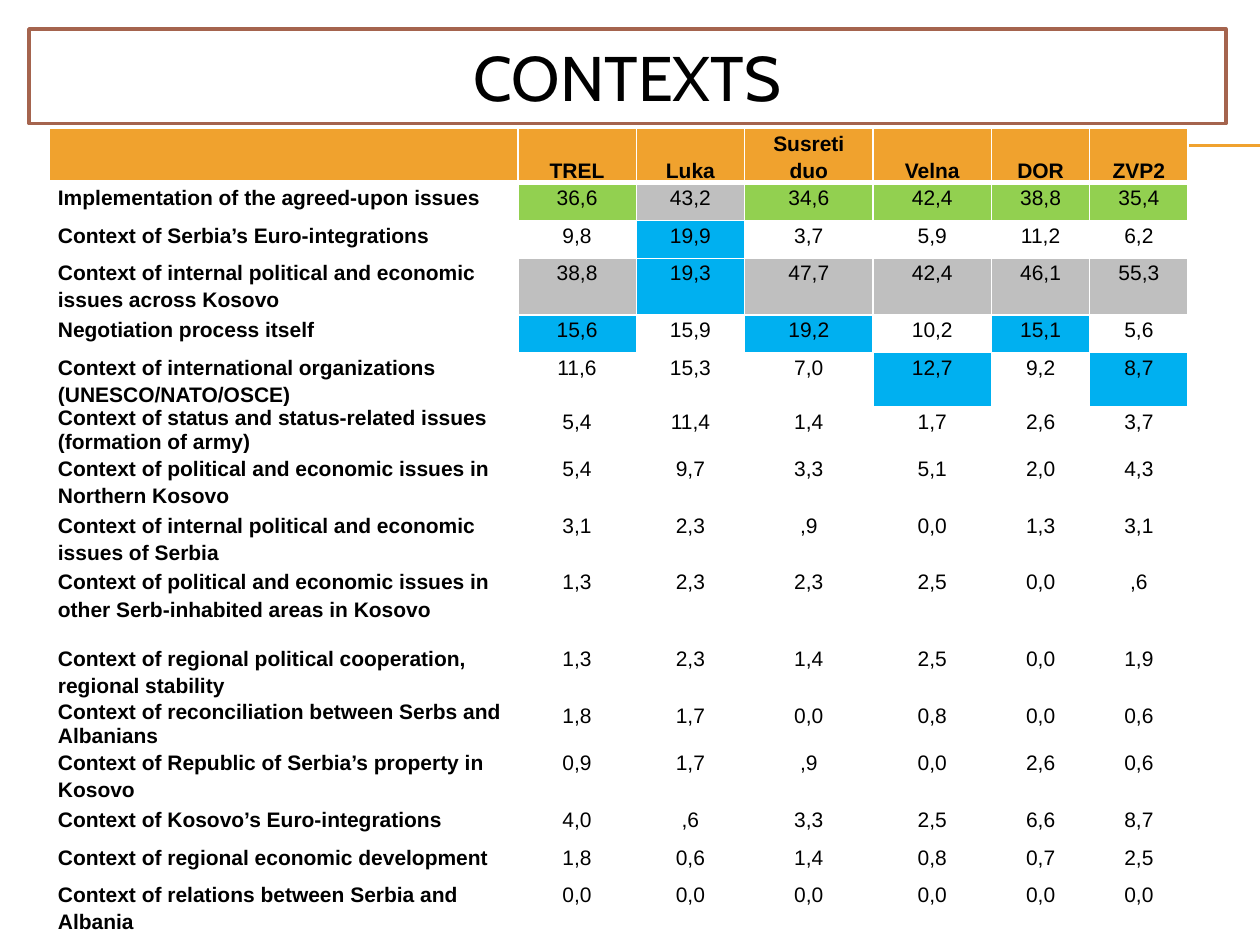
from dataclasses import dataclass

from lxml.etree import SubElement
from pptx import Presentation
from pptx.dml.color import RGBColor
from pptx.enum.shapes import MSO_CONNECTOR, MSO_SHAPE
from pptx.enum.text import MSO_ANCHOR, PP_ALIGN
from pptx.oxml.ns import qn
from pptx.util import Inches, Pt

COLOURS = {
    "text": "000000",
    "paper": "FFFFFF",
    "frame": "A5644E",
    "header": "F0A22E",
    "green": "92D050",
    "grey": "BFBFBF",
    "blue": "00B0F0",
}
MARKS = {"G": "green", "Y": "grey", "B": "blue"}
OUTLETS = ["", "TREL", "Luka", "Susreti duo", "Velna", "DOR", "ZVP2"]
COLUMN_WIDTHS = [3.72, 0.94, 0.86, 1.02, 0.94, 0.78, 0.78]
HEADER_HEIGHT = 0.24


@dataclass
class Context:
    """One table row; marks holds one highlight letter per outlet, '-' for none."""
    label: str
    shares: str
    height: float = 0.3
    marks: str = "------"
    label_spacing: float = 1.15


CONTEXTS = [
    Context("Implementation of the agreed-upon issues",
            "36,6 43,2 34,6 42,4 38,8 35,4", marks="GYGGGG"),
    Context("Context of Serbia’s Euro-integrations",
            "9,8 19,9 3,7 5,9 11,2 6,2", marks="-B----"),
    Context("Context of internal political and economic issues across Kosovo",
            "38,8 19,3 47,7 42,4 46,1 55,3", 0.45, "YBYYYY"),
    Context("Negotiation process itself",
            "15,6 15,9 19,2 10,2 15,1 5,6", marks="B-B-B-"),
    Context("Context of international organizations (UNESCO/NATO/OSCE)",
            "11,6 15,3 7,0 12,7 9,2 8,7", 0.31, "---B-B"),
    Context("Context of status and status-related issues (formation of army)",
            "5,4 11,4 1,4 1,7 2,6 3,7", 0.26, label_spacing=1.0),
    Context("Context of political and economic issues in Northern Kosovo",
            "5,4 9,7 3,3 5,1 2,0 4,3", 0.45),
    Context("Context of internal political and economic issues of Serbia",
            "3,1 2,3 ,9 0,0 1,3 3,1", 0.45),
    Context("Context of political and economic issues in other Serb-inhabited areas in Kosovo",
            "1,3 2,3 2,3 2,5 0,0 ,6", 0.61),
    Context("Context of regional political cooperation, regional stability",
            "1,3 2,3 1,4 2,5 0,0 1,9", 0.45),
    Context("Context of reconciliation between Serbs and Albanians",
            "1,8 1,7 0,0 0,8 0,0 0,6", label_spacing=1.0),
    Context("Context of Republic of Serbia’s property in Kosovo",
            "0,9 1,7 ,9 0,0 2,6 0,6", 0.45),
    Context("Context of Kosovo’s Euro-integrations", "4,0 ,6 3,3 2,5 6,6 8,7"),
    Context("Context of regional economic development", "1,8 0,6 1,4 0,8 0,7 2,5"),
    Context("Context of relations between Serbia and Albania", "0,0 0,0 0,0 0,0 0,0 0,0"),
]


def colour(name: str) -> RGBColor:
    return RGBColor.from_string(COLOURS[name])


def add_text(paragraph, text: str, font: str, size: float, bold: bool = False) -> None:
    run = paragraph.add_run()
    run.text = text
    run.font.name = font
    run.font.size = Pt(size)
    run.font.bold = bold
    run.font.color.rgb = colour("text")


def add_rule(slide, top: float) -> None:
    rule = slide.shapes.add_connector(
        MSO_CONNECTOR.STRAIGHT, Inches(0.56), Inches(top), Inches(10), Inches(top))
    rule.line.color.rgb = colour("header")
    rule.line.width = Pt(0.75)
    SubElement(rule._element.spPr, qn("a:effectLst"))


def add_title(slide, text: str) -> None:
    title = slide.shapes.add_shape(
        MSO_SHAPE.RECTANGLE, Inches(0.23), Inches(0.23), Inches(9.5), Inches(0.75))
    title.shadow.inherit = False
    title.fill.solid()
    title.fill.fore_color.rgb = colour("paper")
    title.line.color.rgb = colour("frame")
    title.line.width = Pt(2)
    title.text_frame.vertical_anchor = MSO_ANCHOR.MIDDLE
    heading = title.text_frame.paragraphs[0]
    heading.alignment = PP_ALIGN.CENTER
    add_text(heading, text, "Cabin", 36)


def set_borders(cell, bottom: float, top: float) -> None:
    """Draw white borders; bottom and top are widths in points."""
    properties = cell._tc.get_or_add_tcPr()
    for side, width in (("L", 1), ("R", 1), ("T", top), ("B", bottom)):
        border = SubElement(properties, qn(f"a:ln{side}"), w=str(Pt(width)))
        fill = SubElement(border, qn("a:solidFill"))
        SubElement(fill, qn("a:srgbClr"), val=COLOURS["paper"])


def fill_cell(cell, text: str, fill: str | None = None, bold: bool = False,
              centred: bool = True, spacing: float = 1.15,
              top: float = 1, bottom: float = 1) -> None:
    set_borders(cell, bottom, top)
    if fill:
        cell.fill.solid()
        cell.fill.fore_color.rgb = colour(fill)
    else:
        cell.fill.background()
    cell.margin_left = cell.margin_right = Inches(0.07)
    cell.margin_top = cell.margin_bottom = 0
    paragraph = cell.text_frame.paragraphs[0]
    paragraph.alignment = PP_ALIGN.CENTER if centred else PP_ALIGN.LEFT
    paragraph.line_spacing = spacing
    if text:
        add_text(paragraph, text, "Arial", 12, bold)


def add_context_table(slide) -> None:
    heights = [HEADER_HEIGHT] + [context.height for context in CONTEXTS]
    table = slide.shapes.add_table(
        len(heights), len(OUTLETS), Inches(0.39), Inches(1.02),
        Inches(sum(COLUMN_WIDTHS)), Inches(sum(heights))).table
    table.first_row = False
    table.horz_banding = False
    for column, width in zip(table.columns, COLUMN_WIDTHS):
        column.width = Inches(width)
    for row, height in zip(table.rows, heights):
        row.height = Inches(height)

    for column, outlet in enumerate(OUTLETS):
        header = table.cell(0, column)
        fill_cell(header, outlet, "header", bold=True, bottom=3)
        header.vertical_anchor = MSO_ANCHOR.BOTTOM

    for row, context in enumerate(CONTEXTS, start=1):
        top = 3 if row == 1 else 1
        fill_cell(table.cell(row, 0), context.label, bold=True, centred=False,
                  spacing=context.label_spacing, top=top)
        for column, (share, mark) in enumerate(
                zip(context.shares.split(), context.marks), start=1):
            fill_cell(table.cell(row, column), share, MARKS.get(mark), top=top)


def main() -> None:
    presentation = Presentation()
    presentation.slide_width = Inches(10)
    presentation.slide_height = Inches(7.5)
    slide = presentation.slides.add_slide(presentation.slide_layouts[6])
    for top in (1.15, 1.16):
        add_rule(slide, top)
    add_title(slide, "CONTEXTS")
    add_context_table(slide)
    presentation.save("out.pptx")


if __name__ == "__main__":
    main()
